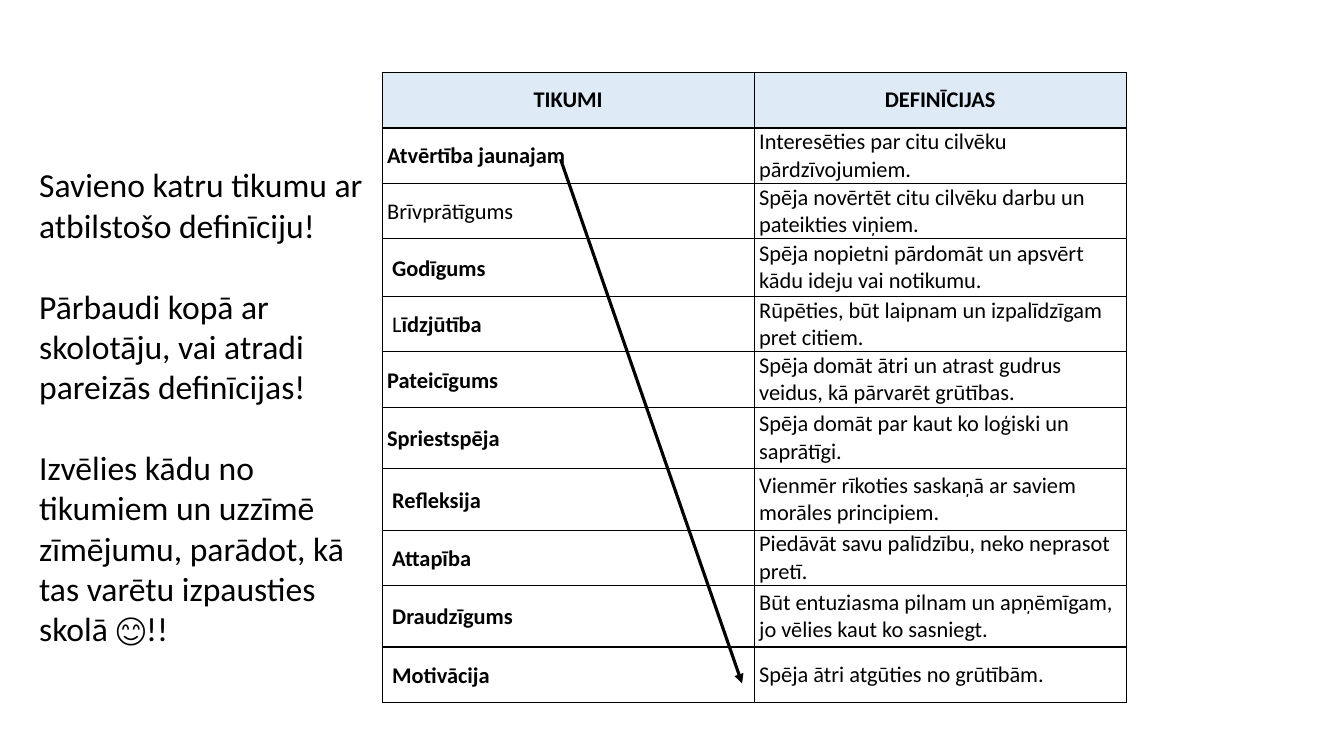
import pptx
import pptx.util
import pptx.dml.color
import pptx.enum.shapes
import pptx.enum.text
import pptx.oxml.ns
from lxml import etree

Inches, Pt = pptx.util.Inches, pptx.util.Pt
BLACK = pptx.dml.color.RGBColor(0, 0, 0)
HEADER_BLUE = pptx.dml.color.RGBColor(0xDE, 0xEB, 0xF7)
FONT = "Calibri"

INSTRUCTIONS = [
    "Savieno katru tikumu ar atbilstošo definīciju!",
    "Pārbaudi kopā ar skolotāju, vai atradi pareizās definīcijas!",
    "Izvēlies kādu no tikumiem un uzzīmē zīmējumu, parādot, kā tas varētu izpausties skolā 😊!!",
]
HEADINGS = ["TIKUMI", "DEFINĪCIJAS"]
# plain start of the virtue, bold rest, indented, definition, row height
VIRTUES = [
    ("", "Atvērtība jaunajam", False, "Interesēties par citu cilvēku pārdzīvojumiem.", 0.55),
    ("Brīvprātīgums", "", False, "Spēja novērtēt citu cilvēku darbu un pateikties viņiem.", 0.55),
    ("", "Godīgums", True, "Spēja nopietni pārdomāt un apsvērt kādu ideju vai notikumu.", 0.57),
    ("L", "īdzjūtība", True, "Rūpēties, būt laipnam un izpalīdzīgam pret citiem.", 0.55),
    ("", "Pateicīgums", False, "Spēja domāt ātri un atrast gudrus veidus, kā pārvarēt grūtības.", 0.55),
    ("", "Spriestspēja", False, "Spēja domāt par kaut ko loģiski un saprātīgi.", 0.61),
    ("", "Refleksija", True, "Vienmēr rīkoties saskaņā ar saviem morāles principiem.", 0.61),
    ("", "Attapība", True, "Piedāvāt savu palīdzību, neko neprasot pretī.", 0.55),
    ("", "Draudzīgums", True, "Būt entuziasma pilnam un apņēmīgam, jo vēlies kaut ko sasniegt.", 0.61),
    ("", "Motivācija", True, "Spēja ātri atgūties no grūtībām.", 0.55),
]
HEADER_HEIGHT = 0.55
COLUMN_WIDTH = 3.69
CELL_INSET = 0.05
ARROW = (5.56, 1.58, 7.36, 6.78)


def add_run(paragraph, text, size, bold=False):
    run = paragraph.add_run()
    run.text = text
    for name, value in {"name": FONT, "size": Pt(size), "bold": bold}.items():
        setattr(run.font, name, value)
    run.font.color.rgb = BLACK


def add_solid_fill(parent):
    fill = etree.SubElement(parent, pptx.oxml.ns.qn("a:solidFill"))
    etree.SubElement(fill, pptx.oxml.ns.qn("a:srgbClr"), val=str(BLACK))


def fill_cell(cell, runs, indented=False, header=False, spacing=None):
    """Write (text, bold) runs in a cell and give it its borders and fill."""
    layout = {
        "margin_left": Inches(CELL_INSET * (2 if indented else 1)),
        "margin_right": Inches(CELL_INSET),
        "margin_top": 0,
        "margin_bottom": 0,
        "vertical_anchor": pptx.enum.text.MSO_ANCHOR.MIDDLE,
    }
    for name, value in layout.items():
        setattr(cell, name, value)
    paragraph = cell.text_frame.paragraphs[0]
    if header:
        paragraph.alignment = pptx.enum.text.PP_ALIGN.CENTER
    if spacing:
        paragraph.line_spacing = spacing
    for text, bold in runs:
        if text:
            add_run(paragraph, text, 16, bold)
    properties = cell._tc.get_or_add_tcPr()
    for side in ("a:lnL", "a:lnR", "a:lnT", "a:lnB"):
        add_solid_fill(etree.SubElement(properties, pptx.oxml.ns.qn(side), w=str(Pt(1))))
    if header:
        cell.fill.solid()
        cell.fill.fore_color.rgb = HEADER_BLUE
    else:
        cell.fill.background()


def add_virtue_table(slide):
    heights = [HEADER_HEIGHT] + [virtue[-1] for virtue in VIRTUES]
    table = slide.shapes.add_table(
        len(heights), len(HEADINGS), Inches(3.79), Inches(0.72),
        Inches(COLUMN_WIDTH * len(HEADINGS)), Inches(sum(heights))).table
    table.horz_banding = False
    for column in table.columns:
        column.width = Inches(COLUMN_WIDTH)
    for row, height in zip(table.rows, heights):
        row.height = Inches(height)
    for index, heading in enumerate(HEADINGS):
        fill_cell(table.cell(0, index), [(heading, True)], header=True)
    for index, (plain, bold, indented, definition, _) in enumerate(VIRTUES, 1):
        fill_cell(table.cell(index, 0), [(plain, False), (bold, True)], indented,
                  spacing=1.07 if index > 1 else None)
        fill_cell(table.cell(index, 1), [(definition, False)])


def add_instructions(slide):
    frame = slide.shapes.add_textbox(
        Inches(0.29), Inches(1.58), Inches(3.57), Inches(4.95)).text_frame
    frame.word_wrap = True
    frame.auto_size = pptx.enum.text.MSO_AUTO_SIZE.SHAPE_TO_FIT_TEXT
    for index, instruction in enumerate(INSTRUCTIONS):
        paragraph = frame.add_paragraph() if index else frame.paragraphs[0]
        if index:
            paragraph.space_before = Pt(29)
        add_run(paragraph, instruction, 24)


def add_answer_arrow(slide):
    arrow = slide.shapes.add_connector(
        pptx.enum.shapes.MSO_CONNECTOR.STRAIGHT, *map(Inches, ARROW))
    arrow.line.color.rgb = BLACK
    arrow.line.width = Pt(2.25)
    etree.SubElement(arrow.line._get_or_add_ln(), pptx.oxml.ns.qn("a:tailEnd"), type="triangle")
    etree.SubElement(arrow._element.spPr, pptx.oxml.ns.qn("a:effectLst"))


def main():
    deck = pptx.Presentation()
    deck.slide_width, deck.slide_height = Inches(13.33), Inches(7.5)
    slide = deck.slides.add_slide(deck.slide_layouts[6])
    add_virtue_table(slide)
    add_instructions(slide)
    add_answer_arrow(slide)
    deck.save("out.pptx")


if __name__ == "__main__":
    main()
